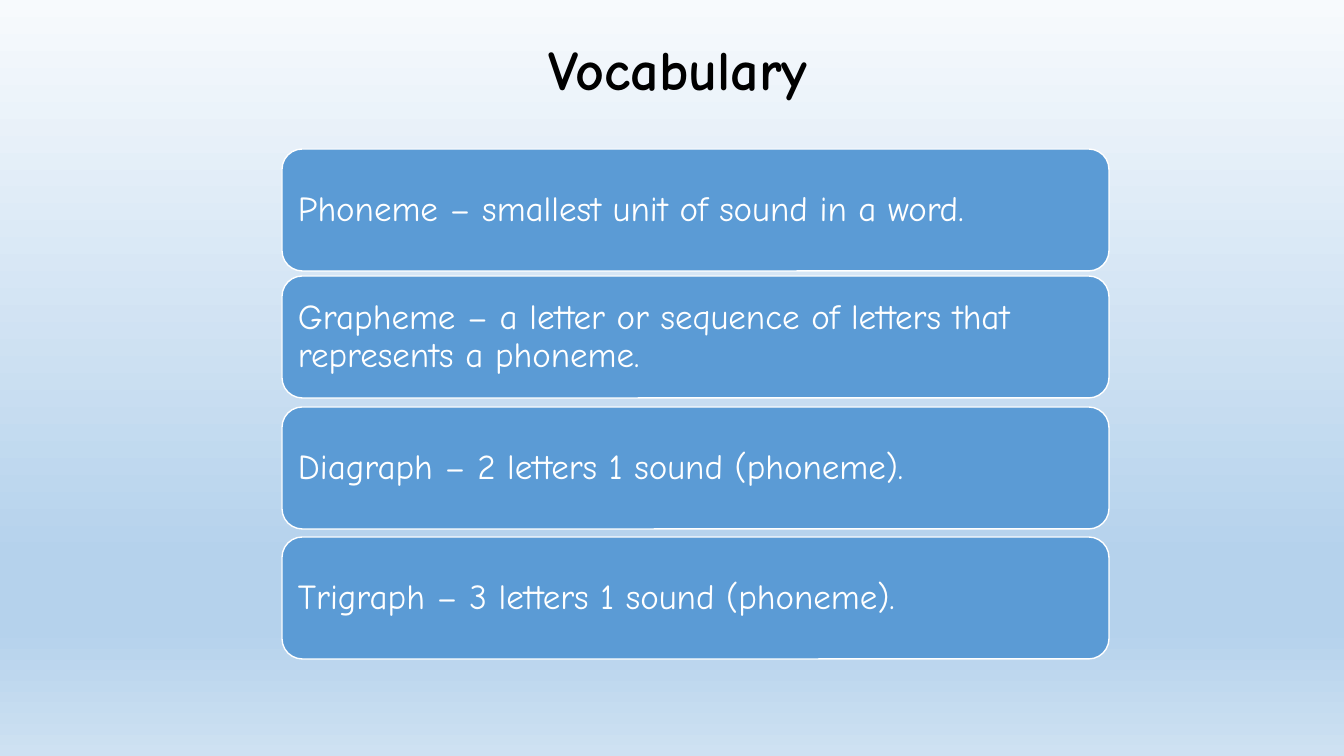
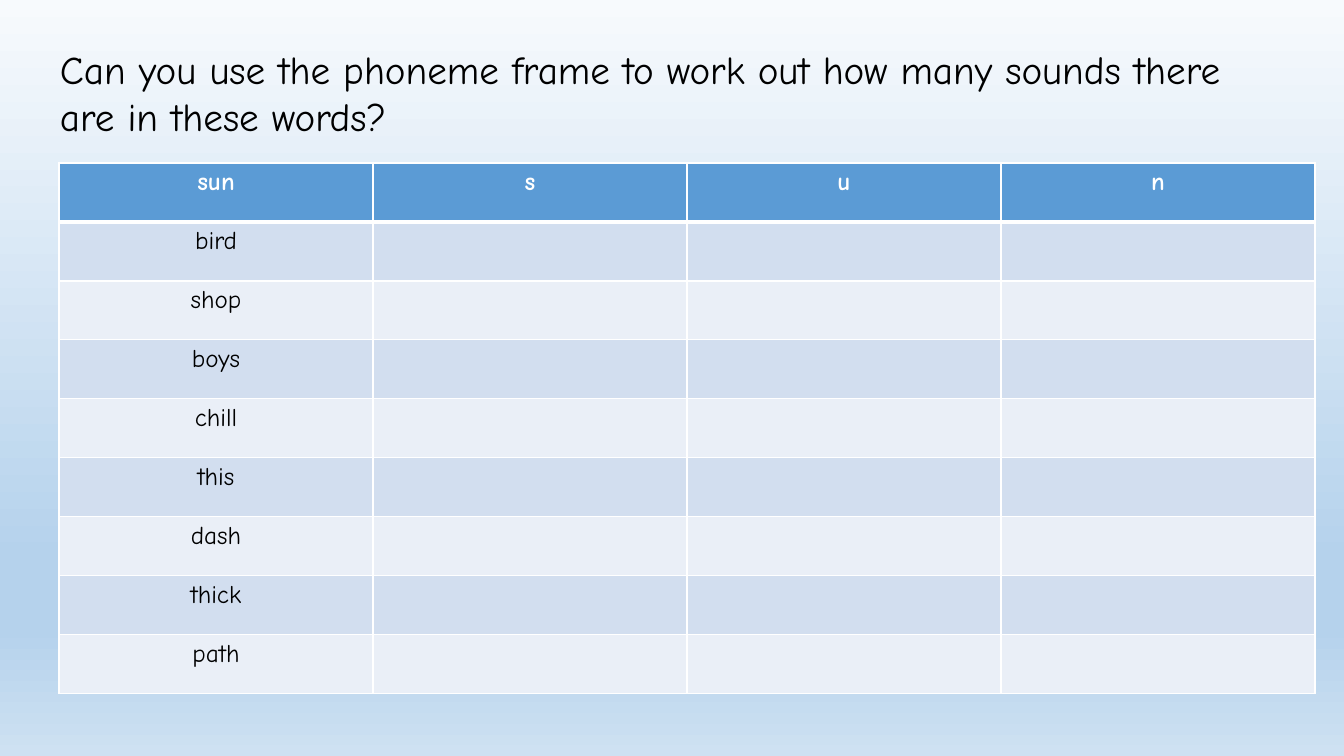
from dataclasses import dataclass

from lxml.etree import SubElement
from pptx import Presentation
from pptx.dml.color import RGBColor
from pptx.enum.shapes import MSO_SHAPE
from pptx.enum.text import MSO_ANCHOR, PP_ALIGN
from pptx.oxml.ns import qn
from pptx.util import Emu, Pt

WIDTH, HEIGHT = 1344, 756
SCALE = 12192000 / WIDTH


@dataclass(frozen=True)
class Theme:
    font: str = "Comic Neue"
    black: str = "000000"
    white: str = "FFFFFF"
    blue: str = "5B9BD5"
    bands: tuple = ("D2DEEF", "EAEFF7")
    backdrop: tuple = ((0, "F7FAFD"), (74, "B5D2EC"), (83, "B5D2EC"), (100, "CEE1F2"))
    title: int = 40
    question: int = 28
    card: int = 25
    cell: int = 18
    rule: int = 1
    header_rule: int = 3


THEME = Theme()

DEFINITIONS = (
    (149, "Phoneme – smallest unit of sound in a word."),
    (276, "Grapheme – a letter or sequence of letters that represents a phoneme."),
    (407, "Diagraph – 2 letters 1 sound (phoneme)."),
    (537, "Trigraph – 3 letters 1 sound (phoneme)."),
)
QUESTION = "Can you use the phoneme frame to work out how many sounds there are in these words?"
HEADER = ("sun", "s", "u", "n")
WORDS = ("bird", "shop", "boys", "chill", "this", "dash", "thick", "path")


def px(n):
    return Emu(round(n * SCALE))


def rgb(color):
    return RGBColor.from_string(color)


def paint(fill, color):
    fill.solid()
    fill.fore_color.rgb = rgb(color)


def write(tf, text, size, color, align=PP_ALIGN.LEFT, bold=False):
    """Set one styled paragraph and return it."""
    tf.text = text
    tf.word_wrap = True
    p = tf.paragraphs[0]
    p.alignment = align
    for r in p.runs:
        r.font.name = THEME.font
        r.font.size = Pt(size)
        r.font.bold = bold
        r.font.color.rgb = rgb(color)
    return p


def set_backdrop(master):
    """Give every slide the vertical gradient through the master."""
    fill = master.background.fill
    fill.gradient()
    fill.gradient_angle = 270
    stops = master.element.find(".//" + qn("a:gsLst"))
    for stop in list(stops):
        stops.remove(stop)
    for percent, color in THEME.backdrop:
        stop = SubElement(stops, qn("a:gs"), pos=str(percent * 1000))
        SubElement(stop, qn("a:srgbClr"), val=color)


def add_heading(s, box, text, size, **style):
    sp = s.shapes.add_textbox(*map(px, box))
    return write(sp.text_frame, text, size, THEME.black, **style)


def add_card(s, box, text):
    sp = s.shapes.add_shape(MSO_SHAPE.ROUNDED_RECTANGLE, *map(px, box))
    sp.shadow.inherit = False
    paint(sp.fill, THEME.blue)
    sp.line.color.rgb = rgb(THEME.white)
    sp.line.width = Pt(THEME.rule)
    tf = sp.text_frame
    tf.margin_left = tf.margin_right = tf.margin_top = tf.margin_bottom = px(10)
    tf.vertical_anchor = MSO_ANCHOR.MIDDLE
    write(tf, text, THEME.card, THEME.white).line_spacing = 0.9


def set_borders(cell, top, bottom):
    """Draw white cell borders; the side borders use the thin rule."""
    tc_pr = cell._tc.get_or_add_tcPr()
    widths = {"L": THEME.rule, "R": THEME.rule, "T": top, "B": bottom}
    for i, (side, width) in enumerate(widths.items()):
        ln = SubElement(tc_pr, qn("a:ln" + side), w=str(Pt(width)))
        fill = SubElement(ln, qn("a:solidFill"))
        SubElement(fill, qn("a:srgbClr"), val=THEME.white)
        tc_pr.insert(i, ln)  # borders come before the fill


def add_phoneme_frame(s, box, header, words):
    rows, cols = len(words) + 1, len(header)
    left, top, width, height = box
    table = s.shapes.add_table(rows, cols, *map(px, box)).table
    for column in table.columns:
        column.width = px(width // cols)
    for row in table.rows:
        row.height = px(height // rows)
    for i in range(rows):
        is_header = i == 0
        texts = header if is_header else (words[i - 1],) + ("",) * (cols - 1)
        color = THEME.white if is_header else THEME.black
        for j, text in enumerate(texts):
            cell = table.cell(i, j)
            write(cell.text_frame, text, THEME.cell, color, PP_ALIGN.CENTER, is_header)
            paint(cell.fill, THEME.blue if is_header else THEME.bands[(i - 1) % 2])
            set_borders(
                cell,
                top=THEME.header_rule if i == 1 else THEME.rule,
                bottom=THEME.header_rule if is_header else THEME.rule,
            )


def vocabulary_slide(s):
    p = add_heading(s, (40, 37, 1276, 80), "Vocabulary", THEME.title,
                    align=PP_ALIGN.CENTER, bold=True)
    p.line_spacing = 0.9
    p.space_before = Pt(10)
    for top, text in DEFINITIONS:
        add_card(s, (282, top, 827, 122), text)


def frame_slide(s):
    add_heading(s, (50, 40, 1246, 104), QUESTION, THEME.question)
    add_phoneme_frame(s, (59, 163, 1256, 531), HEADER, WORDS)


def main():
    prs = Presentation()
    prs.slide_width, prs.slide_height = px(WIDTH), px(HEIGHT)
    set_backdrop(prs.slide_master)
    for build in (vocabulary_slide, frame_slide):
        build(prs.slides.add_slide(prs.slide_layouts[6]))
    prs.save("out.pptx")


if __name__ == "__main__":
    main()
